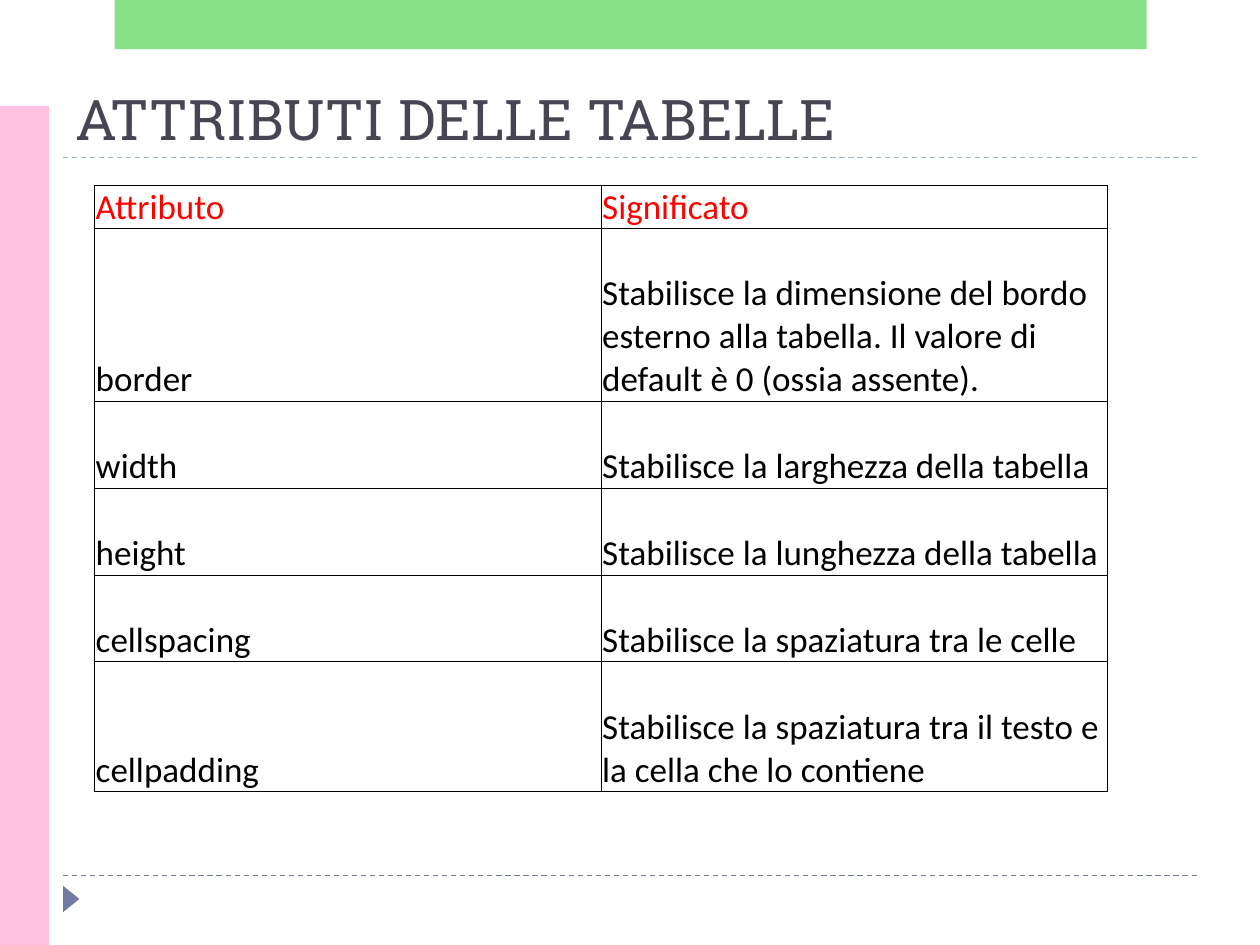
from lxml import etree
from pptx import Presentation
from pptx.dml.color import RGBColor
from pptx.enum.dml import MSO_LINE
from pptx.enum.shapes import MSO_CONNECTOR, MSO_SHAPE
from pptx.enum.text import MSO_ANCHOR
from pptx.oxml.ns import qn
from pptx.util import Inches, Pt

RECTANGLE = MSO_SHAPE.RECTANGLE
TRIANGLE = MSO_SHAPE.ISOSCELES_TRIANGLE
STRAIGHT = MSO_CONNECTOR.STRAIGHT
DASH = MSO_LINE.DASH
BOTTOM = MSO_ANCHOR.BOTTOM

BLACK = RGBColor(0x00, 0x00, 0x00)
RED = RGBColor(0xFF, 0x00, 0x00)
SLATE = RGBColor(0x46, 0x46, 0x53)
INDIGO = RGBColor(0x72, 0x7C, 0xA3)
PALE_BLUE = RGBColor(0x9F, 0xB8, 0xCD)
PINK = RGBColor(0xFF, 0xC1, 0xE0)
GREEN = RGBColor(0x62, 0xD8, 0x62)

ATTRIBUTES = [
    ("Attributo", "Significato", 0.34),
    ("border", "Stabilisce la dimensione del bordo esterno alla tabella. "
     "Il valore di default è 0 (ossia assente).", 1.37),
    ("width", "Stabilisce la larghezza della tabella", 0.69),
    ("height", "Stabilisce la lunghezza della tabella", 0.69),
    ("cellspacing", "Stabilisce la spaziatura tra le celle", 0.69),
    ("cellpadding", "Stabilisce la spaziatura tra il testo e la cella che lo contiene", 1.03),
]


class SlideBuilder:
    title_font = "Roboto Slab"
    body_font = "Calibri"
    title_size = Pt(32)
    body_size = Pt(20)
    rule_width = Pt(0.75)
    border_width = Pt(0.5)
    cell_inset = Inches(0.01)

    def __init__(self, slide):
        self.slide = slide

    def rule(self, y, color):
        line = self.slide.shapes.add_connector(
            STRAIGHT, Inches(0.5), Inches(y), Inches(9.5), Inches(y))
        line.line.color.rgb = color
        line.line.width = self.rule_width
        line.line.dash_style = DASH
        etree.SubElement(line._element.spPr, qn("a:effectLst"))

    def block(self, kind, left, top, width, height, color, rotation=0, opacity=100):
        block = self.slide.shapes.add_shape(
            kind, Inches(left), Inches(top), Inches(width), Inches(height))
        block.rotation = rotation
        block.shadow.inherit = False
        block.fill.solid()
        block.fill.fore_color.rgb = color
        block.line.fill.background()
        if opacity < 100:
            fill_color = block._element.spPr.find(".//" + qn("a:srgbClr"))
            etree.SubElement(fill_color, qn("a:alpha"), val=str(opacity * 1000))

    def title(self, text, left, top, width, height):
        frame = self.slide.shapes.add_textbox(
            Inches(left), Inches(top), Inches(width), Inches(height)).text_frame
        frame.word_wrap = True
        frame.vertical_anchor = BOTTOM
        frame.text = text
        self.style(frame.paragraphs[0], self.title_font, self.title_size, SLATE)

    def style(self, paragraph, name, size, color):
        paragraph.font.name = name
        paragraph.font.size = size
        paragraph.font.color.rgb = color

    def table(self, rows, left, top, column_width):
        height = sum(row_height for *_, row_height in rows)
        table = self.slide.shapes.add_table(
            len(rows), 2, Inches(left), Inches(top),
            Inches(2 * column_width), Inches(height)).table
        table.first_row = False
        table.horz_banding = False
        for row_index, (*texts, row_height) in enumerate(rows):
            table.rows[row_index].height = Inches(row_height)
            color = BLACK if row_index else RED
            for column, text in enumerate(texts):
                self.cell(table.cell(row_index, column), text, color)

    def cell(self, cell, text, color):
        cell.text = text
        cell.vertical_anchor = BOTTOM
        cell.margin_left = cell.margin_right = cell.margin_top = self.cell_inset
        cell.margin_bottom = 0
        cell.fill.background()
        self.style(cell.text_frame.paragraphs[0], self.body_font, self.body_size, color)
        properties = cell._tc.get_or_add_tcPr()
        for position, side in enumerate(("lnL", "lnR", "lnT", "lnB")):
            border = etree.Element(qn("a:" + side), w=str(self.border_width))
            fill = etree.SubElement(border, qn("a:solidFill"))
            etree.SubElement(fill, qn("a:srgbClr"), val=str(BLACK))
            properties.insert(position, border)


def main():
    presentation = Presentation()
    presentation.slide_width = Inches(10)
    presentation.slide_height = Inches(7.5)
    builder = SlideBuilder(presentation.slides.add_slide(presentation.slide_layouts[6]))

    builder.rule(6.95, INDIGO)
    builder.rule(1.25, PALE_BLUE)
    builder.block(TRIANGLE, 0.46, 7.07, 0.21, 0.13, INDIGO, rotation=90)
    builder.block(RECTANGLE, 0, 0.84, 0.39, 6.66, PINK)
    builder.block(RECTANGLE, 0.91, 0, 8.19, 0.39, GREEN, opacity=76)
    builder.title("ATTRIBUTI DELLE TABELLE", 0.5, 0.55, 9, 0.7)
    builder.table(ATTRIBUTES, 0.75, 1.47, 4.02)

    presentation.save("out.pptx")


if __name__ == "__main__":
    main()
